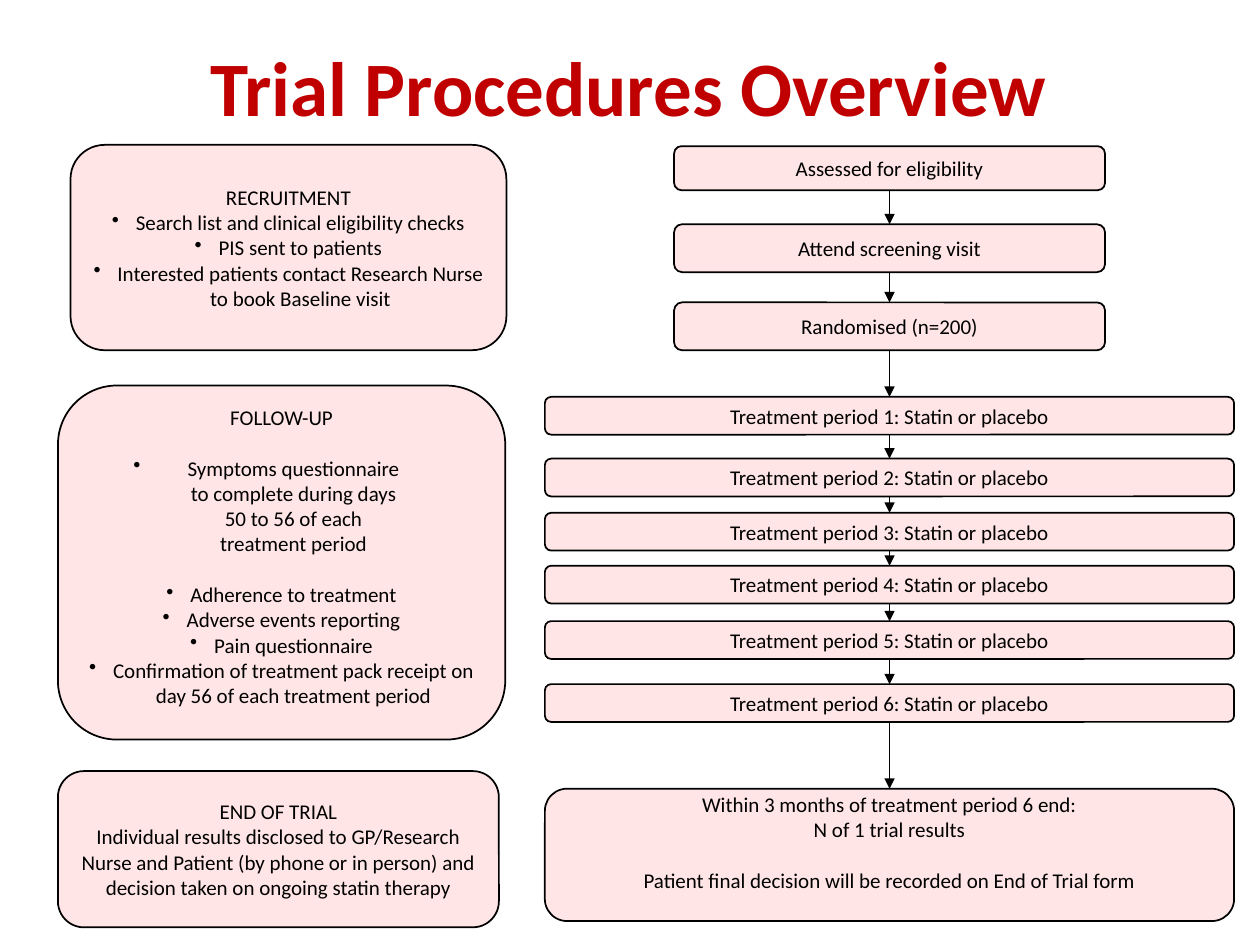
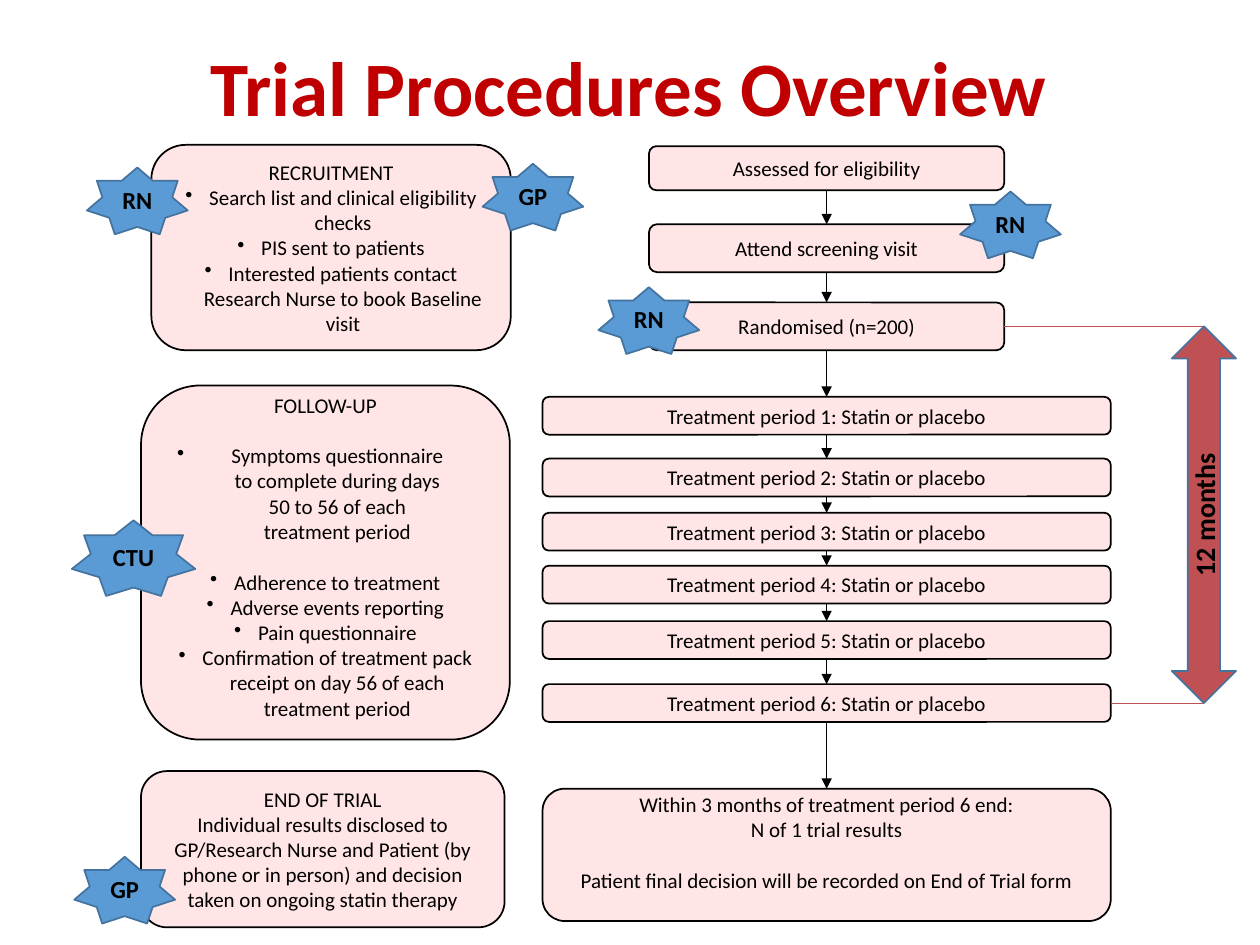
from lxml import etree
from pptx import Presentation
from pptx.dml.color import RGBColor
from pptx.enum.shapes import MSO_CONNECTOR, MSO_SHAPE
from pptx.enum.text import MSO_ANCHOR, PP_ALIGN
from pptx.oxml.ns import qn
from pptx.util import Inches, Pt

ROUNDED, STAR = MSO_SHAPE.ROUNDED_RECTANGLE, MSO_SHAPE.STAR_7_POINT
DOUBLE_ARROW = MSO_SHAPE.UP_DOWN_ARROW
STRAIGHT = MSO_CONNECTOR.STRAIGHT
MIDDLE, CENTER = MSO_ANCHOR.MIDDLE, PP_ALIGN.CENTER

FONT = "Calibri"
COLORS = {"title": "C00000", "ink": "000000", "box": "FFE5E5", "star": "5B9BD5",
          "edge": "43739E", "span": "BF5154"}
TITLE = "Trial Procedures Overview"
LINE_GAP = 14.6  # points, one line of 12 point text
BULLET = 0.19

# Paragraphs are (text, bullet hang in inches, points before).
STAGES = [
    {"at": (0.56, 1.15, 3.46, 1.63), "paras": [
        ("RECRUITMENT", 0, 0),
        ("Search list and clinical eligibility checks", BULLET, 0),
        ("PIS sent to patients", BULLET, 0),
        ("Interested patients contact Research Nurse to book Baseline visit", BULLET, 0)]},
    {"at": (0.46, 3.06, 3.55, 2.81), "foot": 0.15, "paras": [
        ("FOLLOW-UP", 0, 0),
        ("Symptoms questionnaire\vto complete during days\v50 to 56 of each\v"
         "treatment period", 0.43, LINE_GAP),
        ("Adherence to treatment", BULLET, LINE_GAP),
        ("Adverse events reporting", BULLET, 0),
        ("Pain questionnaire", BULLET, 0),
        ("Confirmation of treatment pack receipt on day 56 of each treatment period",
         BULLET, 0)]},
    {"at": (0.46, 6.12, 3.5, 1.24), "paras": [
        ("END OF TRIAL", 0, 0),
        ("Individual results disclosed to GP/Research Nurse and Patient (by phone or "
         "in person) and decision taken on ongoing statin therapy", 0, 0)]},
]

# The flow runs down one axis: text, top, height.
FLOW_AXIS, NARROW, WIDE = 7.06, 3.42, 5.47
VISITS = [("Assessed for eligibility", 1.16, 0.35),
          ("Attend screening visit", 1.78, 0.38),
          ("Randomised (n=200)", 2.4, 0.38)]
PERIOD_TOPS = [3.15, 3.64, 4.07, 4.49, 4.93, 5.43]
PERIOD_HEIGHT = 0.3
RESULTS = {"top": 6.26, "height": 1.05, "foot": 0.25, "paras": [
    ("Within 3 months of treatment period 6 end:", 0, 0),
    ("N of 1 trial results", 0, 0),
    ("Patient final decision will be recorded on End of Trial form", 0, LINE_GAP)]}

# Each page squeezes the same diagram sideways: x -> shift + scale * x.
PAGES = [{"shift": 0, "scale": 1, "roles": False},
         {"shift": 0.74, "scale": 0.8245, "roles": True}]

SMALL_STAR, LARGE_STAR = (0.8, 0.53), (0.98, 0.6)
ROLES = [("GP", 3.83, 1.3, SMALL_STAR), ("GP", 0.59, 6.8, SMALL_STAR),
         ("CTU", 0.57, 4.13, LARGE_STAR), ("RN", 4.75, 2.28, SMALL_STAR),
         ("RN", 7.62, 1.52, SMALL_STAR), ("RN", 0.69, 1.33, SMALL_STAR)]
DURATION = ("12 months", (9.3, 2.59, 0.51, 2.99))


def rgb(name):
    return RGBColor.from_string(COLORS[name])


def style_para(para, size, color="ink", bold=False):
    para.alignment = CENTER
    font = para.font
    font.name, font.size, font.bold = FONT, Pt(size), bold
    font.color.rgb = rgb(color)


def add_bullet(para, hang):
    props = para._p.get_or_add_pPr()
    props.set("marL", str(Inches(BULLET)))
    props.set("indent", str(-Inches(hang)))
    mark = etree.Element(qn("a:buChar"), char="•")
    props.insert_element_before(mark, "a:tabLst", "a:defRPr", "a:extLst")


def add_shape(page, kind, at, fill, edge):
    shape = page.shapes.add_shape(kind, *map(Inches, at))
    shape.shadow.inherit = False
    shape.fill.solid()
    shape.fill.fore_color.rgb = rgb(fill)
    shape.line.color.rgb = rgb(edge)
    shape.line.width = Pt(1)
    shape.text_frame.vertical_anchor = MIDDLE
    return shape


def add_box(page, at, paras, foot=0.05):
    """Draw a pink box; a larger foot lifts its text above the middle."""
    box = add_shape(page, ROUNDED, at, "box", "ink")
    frame = box.text_frame
    frame.word_wrap = True
    frame.margin_bottom = Inches(foot)
    for index, (text, hang, before) in enumerate(paras):
        para = frame.add_paragraph() if index else frame.paragraphs[0]
        para.text = text
        style_para(para, 12)
        if before:
            para.space_before = Pt(before)
        if hang:
            add_bullet(para, hang)
    return box


def add_label(page, kind, at, fill, text, size):
    shape = add_shape(page, kind, at, fill, "edge")
    frame = shape.text_frame
    frame.word_wrap = False
    frame.margin_left = frame.margin_right = 0
    frame.margin_top = frame.margin_bottom = 0
    frame.text = text
    style_para(frame.paragraphs[0], size, bold=True)
    return shape


def add_line(page, color, start, side, end=(0, 0)):
    """Start a thin line at the given side of a box."""
    line = page.shapes.add_connector(STRAIGHT, 0, 0, *map(Inches, end))
    line.begin_connect(start, side)
    line.line.color.rgb = rgb(color)
    line.line.width = Pt(0.5)
    etree.SubElement(line._element.spPr, qn("a:effectLst"))
    return line


def add_arrow(page, upper, lower):
    arrow = add_line(page, "ink", upper, 2)
    arrow.end_connect(lower, 0)
    etree.SubElement(arrow.line._get_or_add_ln(), qn("a:tailEnd"), type="triangle")


def add_title(page):
    frame = page.shapes.add_textbox(*map(Inches, (0.68, 0, 8.62, 1.45))).text_frame
    frame.word_wrap = True
    frame.vertical_anchor = MIDDLE
    frame.text = TITLE
    para = frame.paragraphs[0]
    para.line_spacing = 0.9
    style_para(para, 44, "title", bold=True)


def add_diagram(page, shift, scale):
    """Draw the stages and the flow; return the flow's boxes from top to bottom."""
    def squeeze(left, top, width, height):
        return shift + scale * left, top, scale * width, height

    def centred(width, top, height):
        return squeeze(FLOW_AXIS - width / 2, top, width, height)

    for stage in STAGES:
        add_box(page, squeeze(*stage["at"]), stage["paras"], stage.get("foot", 0.05))
    flow = [add_box(page, centred(NARROW, top, height), [(text, 0, 0)])
            for text, top, height in VISITS]
    flow += [add_box(page, centred(WIDE, top, PERIOD_HEIGHT),
                     [(f"Treatment period {number}: Statin or placebo", 0, 0)])
             for number, top in enumerate(PERIOD_TOPS, 1)]
    flow.append(add_box(page, centred(WIDE, RESULTS["top"], RESULTS["height"]),
                        RESULTS["paras"], RESULTS["foot"]))
    for upper, lower in zip(flow, flow[1:]):
        add_arrow(page, upper, lower)
    return flow


def add_duration(page, randomised, last_period):
    text, at = DURATION
    left, top, width, height = at
    arrow = add_label(page, DOUBLE_ARROW, at, "span", text, 16)
    arrow.text_frame._txBody.bodyPr.set("vert", "vert270")
    for box, y in ((randomised, top), (last_period, top + height)):
        add_line(page, "span", box, 3, (left + width / 2, y))


def main():
    deck = Presentation()
    deck.slide_width, deck.slide_height = Inches(10), Inches(7.5)
    for plan in PAGES:
        page = deck.slides.add_slide(deck.slide_layouts[6])
        flow = add_diagram(page, plan["shift"], plan["scale"])
        add_title(page)
        if plan["roles"]:
            add_duration(page, flow[len(VISITS) - 1], flow[-2])
            for text, left, top, size in ROLES:
                add_label(page, STAR, (left, top, *size), "star", text, 14)
    deck.save("out.pptx")


if __name__ == "__main__":
    main()
